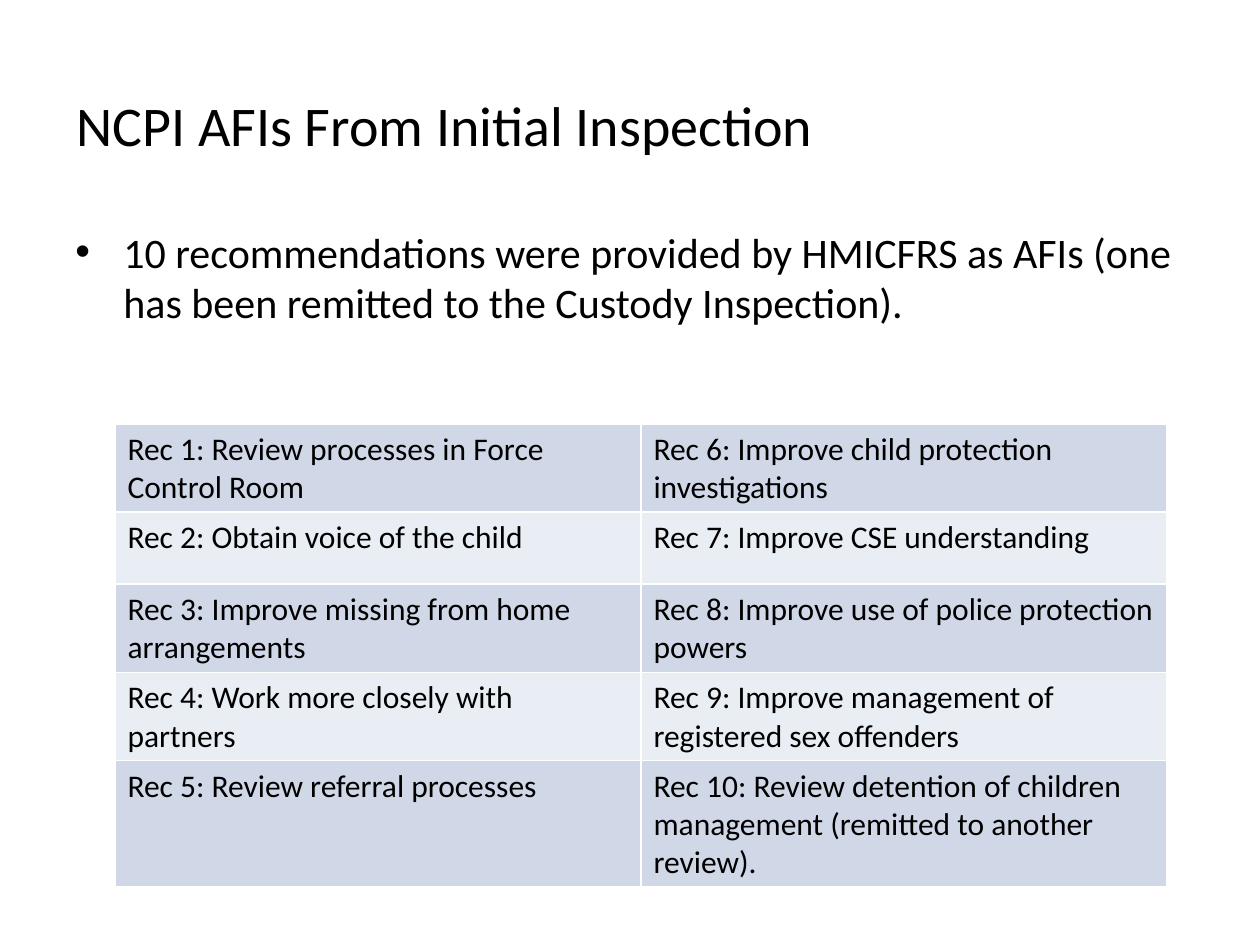
"""Build the slide listing the AFIs from the initial NCPI inspection."""
from lxml import etree
from pptx import Presentation
from pptx import util as u
from pptx.dml.color import RGBColor
from pptx.enum import text
from pptx.oxml.ns import qn

TITLE = "NCPI AFIs From Initial Inspection"
INTRO = ("10 recommendations were provided by HMICFRS as AFIs "
         "(one has been remitted to the Custody Inspection).")
RECOMMENDATIONS = [
    "Review processes in Force Control Room",
    "Obtain voice of the child",
    "Improve missing from home arrangements",
    "Work more closely with partners",
    "Review referral processes",
    "Improve child protection investigations",
    "Improve CSE understanding",
    "Improve use of police protection powers",
    "Improve management of registered sex offenders",
    "Review detention of children management (remitted to another review).",
]
COLORS = {"text": "000000", "odd": "D0D8E8", "even": "E9EDF4"}
FONT = "Calibri"
PX = u.Inches(1) // 126
ROWS, COLS = 5, 2
COL_W, ROW_H = 526, 72


def box(*lengths):
    return [n * PX for n in lengths]


def style(p, size):
    p.alignment = text.PP_ALIGN.LEFT
    for r in p.runs:
        r.font.name = FONT
        r.font.size = u.Pt(size)
        r.font.bold = False
        r.font.color.rgb = RGBColor.from_string(COLORS["text"])


def add_bullet(p, indent):
    pPr = p._p.get_or_add_pPr()
    pPr.set("marL", str(indent))
    pPr.set("indent", str(-indent))
    etree.SubElement(pPr, qn("a:buFont")).set("typeface", "Arial")
    etree.SubElement(pPr, qn("a:buChar")).set("char", "•")


def add_title(s):
    title = s.shapes.title
    title.left, title.top, title.width, title.height = box(64, 45, 997, 158)
    title.text_frame.text = TITLE
    title.text_frame.vertical_anchor = text.MSO_ANCHOR.MIDDLE
    style(title.text_frame.paragraphs[0], 32)


def add_intro(s):
    tf = s.shapes.add_textbox(*box(63, 220, 1134, 624)).text_frame
    tf.word_wrap = True
    tf.text = INTRO
    p = tf.paragraphs[0]
    add_bullet(p, 48 * PX)
    style(p, 24)


def add_recommendations(s):
    frame = s.shapes.add_table(ROWS, COLS, *box(115, 424, COLS * COL_W, ROWS * ROW_H))
    table = frame.table
    table.first_row = False
    for i, rec in enumerate(RECOMMENDATIONS):
        col, row = divmod(i, ROWS)
        cell = table.cell(row, col)
        cell.text = f"Rec {i + 1}: {rec}"
        cell.fill.solid()
        cell.fill.fore_color.rgb = RGBColor.from_string(COLORS["even" if row % 2 else "odd"])
        style(cell.text_frame.paragraphs[0], 18)


def main():
    prs = Presentation()
    prs.slide_width, prs.slide_height = box(1260, 945)
    s = prs.slides.add_slide(prs.slide_layouts[5])
    add_title(s)
    add_intro(s)
    add_recommendations(s)
    prs.save("out.pptx")


if __name__ == "__main__":
    main()
